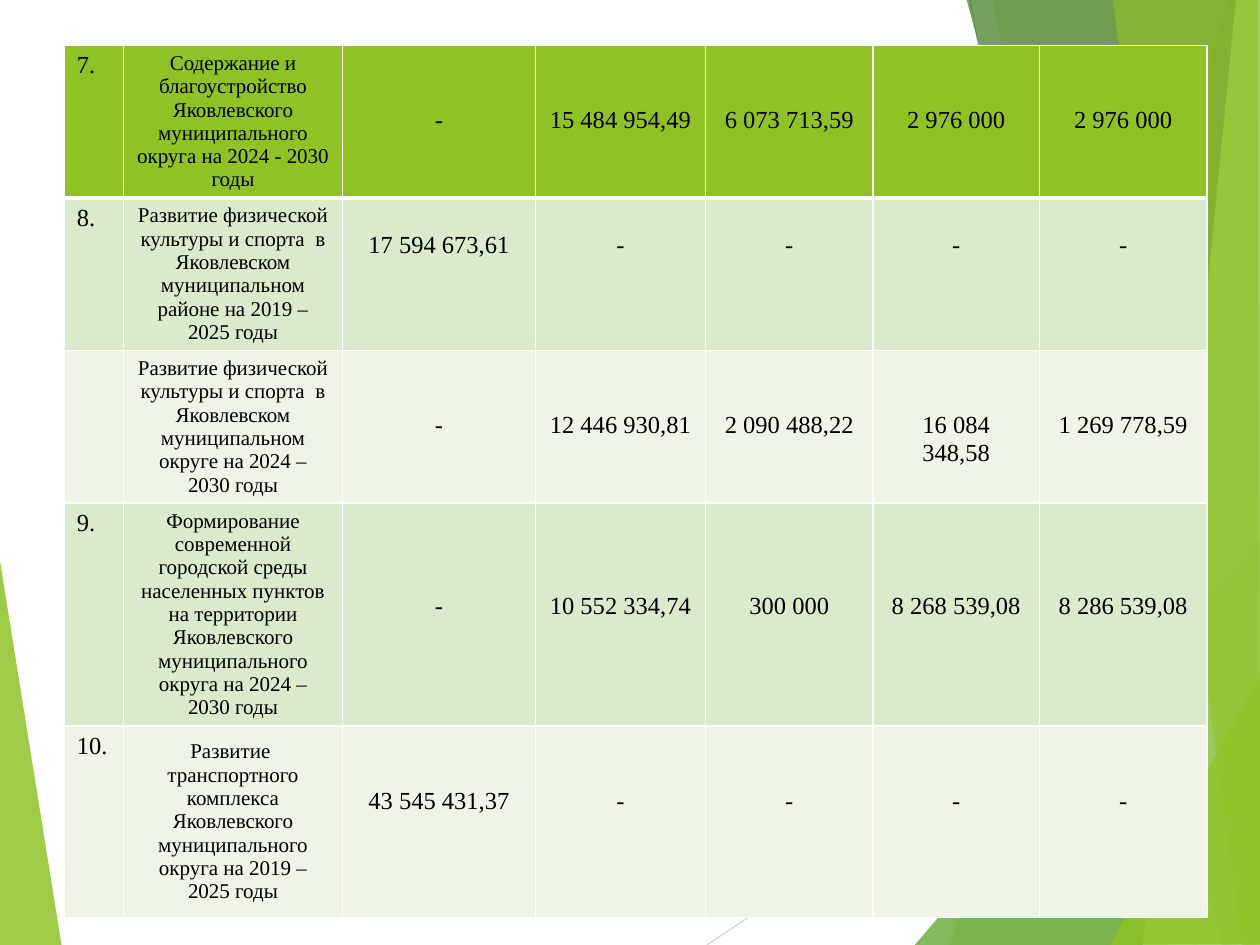
from lxml import etree
from pptx import Presentation
from pptx.dml.color import RGBColor
from pptx.enum.shapes import MSO_CONNECTOR
from pptx.enum.text import MSO_ANCHOR, PP_ALIGN
from pptx.oxml.ns import qn
from pptx.util import Inches, Pt

FONT = "Times New Roman"

# Colour, opacity in percent, corner points in inches
LEFT_FACET = ("90C226", 85, [(-0.01, 4.39), (0.49, 7.51), (-0.01, 7.5)])
RIGHT_FACETS = [
    ("90C226", 30, [(9.75, 0), (7.54, 7.5), (10.02, 7.51), (10.01, 0.01)]),
    ("90C226", 20, [(7.88, -0.01), (9.19, 7.5), (10.01, 7.5), (10.01, -0.01)]),
    ("54A021", 72, [(7.26, 7.5), (10, 4.29), (10.01, 7.5)]),
    ("3F7819", 70, [(7.67, -0.01), (9.7, 7.5), (10.01, 7.49), (10.01, -0.01)]),
    ("C0E474", 70, [(9.81, -0.01), (9.07, 7.5), (10.01, 7.5), (10, -0.01)]),
    ("90C226", 65, [(8.83, -0.01), (9.86, 7.5), (10, 7.5), (9.98, -0.01)]),
    ("90C226", 80, [(8.81, 7.5), (10.01, 5.35), (10.01, 7.49)]),
]
LINES = [("D9D9D9", (5.61, 7.5), (10.01, 4.57)), ("BFBFBF", (7.7, 0), (9.04, 7.5))]

COLUMN_WIDTHS = [0.47, 1.74, 1.53, 1.35, 1.33, 1.32, 1.33]
# Row height, fill, lines of space above the amounts, cell texts
ROWS = [
    (1.21, "90C226", 2, [
        "7.", "Содержание и благоустройство Яковлевского муниципального округа на 2024 - 2030 годы",
        "-", "15 484 954,49", "6 073 713,59", "2 976 000", "2 976 000"]),
    (1.21, "DBE9CD", 1, [
        "8.", "Развитие физической культуры и спорта  в Яковлевском муниципальном районе на 2019 – 2025 годы",
        "17 594 673,61", "-", "-", "-", "-"]),
    (1.21, "EEF4E8", 2, [
        "", "Развитие физической культуры и спорта  в Яковлевском муниципальном округе на 2024 – 2030 годы",
        "-", "12 446 930,81", "2 090 488,22", "16 084 348,58", "1 269 778,59"]),
    (1.77, "DBE9CD", 3, [
        "9.", "Формирование современной городской среды населенных пунктов на территории "
        "Яковлевского муниципального округа на 2024 – 2030 годы",
        "-", "10 552 334,74", "300 000", "8 268 539,08", "8 286 539,08"]),
    (1.52, "EEF4E8", 2, [
        "10.", "Развитие  транспортного комплекса Яковлевского муниципального округа на 2019 – 2025 годы",
        "43 545 431,37", "-", "-", "-", "-"]),
]
CELL_MARGIN = 0.05
LINE_HEIGHT = 0.22


def color(value):
    return RGBColor.from_string(value)


def add_facet(slide, fill, opacity, points):
    corners = [(Inches(x), Inches(y)) for x, y in points]
    builder = slide.shapes.build_freeform(*corners[0])
    builder.add_line_segments(corners[1:], close=True)
    shape = builder.convert_to_shape()
    shape.shadow.inherit = False
    shape.line.fill.background()
    shape.fill.solid()
    shape.fill.fore_color.rgb = color(fill)
    rgb = shape._element.spPr.find(qn("a:solidFill")).find(qn("a:srgbClr"))
    etree.SubElement(rgb, qn("a:alpha"), val=str(opacity * 1000))


def add_line(slide, stroke, start, end):
    ends = [Inches(value) for value in start + end]
    connector = slide.shapes.add_connector(MSO_CONNECTOR.STRAIGHT, *ends)
    connector.line.color.rgb = color(stroke)
    connector.line.width = Pt(0.75)
    etree.SubElement(connector._element.spPr, qn("a:effectLst"))


def set_borders(cell, widths):
    """Draw white borders; widths are points for left, right, top and bottom."""
    properties = cell._tc.get_or_add_tcPr()
    for side, width in zip("LRTB", widths):
        border = etree.SubElement(properties, qn(f"a:ln{side}"), w=str(Pt(width)))
        fill = etree.SubElement(border, qn("a:solidFill"))
        etree.SubElement(fill, qn("a:srgbClr"), val="FFFFFF")


def fill_cell(cell, text, column, fill, lines_above):
    cell.fill.solid()
    cell.fill.fore_color.rgb = color(fill)
    cell.text = text
    paragraph = cell.text_frame.paragraphs[0]
    paragraph.font.name = FONT
    paragraph.font.size = Pt(12 if column == 1 else 14)
    paragraph.font.bold = False
    paragraph.font.color.rgb = color("000000")
    if column > 0:
        paragraph.alignment = PP_ALIGN.CENTER
    if column == 1:
        cell.vertical_anchor = MSO_ANCHOR.MIDDLE
    elif column > 1:
        cell.margin_top = Inches(CELL_MARGIN + lines_above * LINE_HEIGHT)


def add_programme_table(slide):
    frame = slide.shapes.add_table(
        len(ROWS), len(COLUMN_WIDTHS), Inches(0.51), Inches(0.36),
        Inches(sum(COLUMN_WIDTHS)), Inches(sum(row[0] for row in ROWS)))
    table = frame.table
    table.first_row = table.horz_banding = False
    for column, width in zip(table.columns, COLUMN_WIDTHS):
        column.width = Inches(width)
    for row_index, (height, fill, lines_above, texts) in enumerate(ROWS):
        table.rows[row_index].height = Inches(height)
        top = 3 if row_index == 1 else 1
        bottom = 3 if row_index == 0 else 1
        for column_index, text in enumerate(texts):
            cell = table.cell(row_index, column_index)
            set_borders(cell, (1, 1, top, bottom))
            fill_cell(cell, text, column_index, fill, lines_above)


def main():
    presentation = Presentation()
    presentation.slide_width, presentation.slide_height = Inches(10), Inches(7.5)
    slide = presentation.slides.add_slide(presentation.slide_layouts[6])
    add_facet(slide, *LEFT_FACET)
    for line in LINES:
        add_line(slide, *line)
    for facet in RIGHT_FACETS:
        add_facet(slide, *facet)
    add_programme_table(slide)
    presentation.save("out.pptx")


if __name__ == "__main__":
    main()
